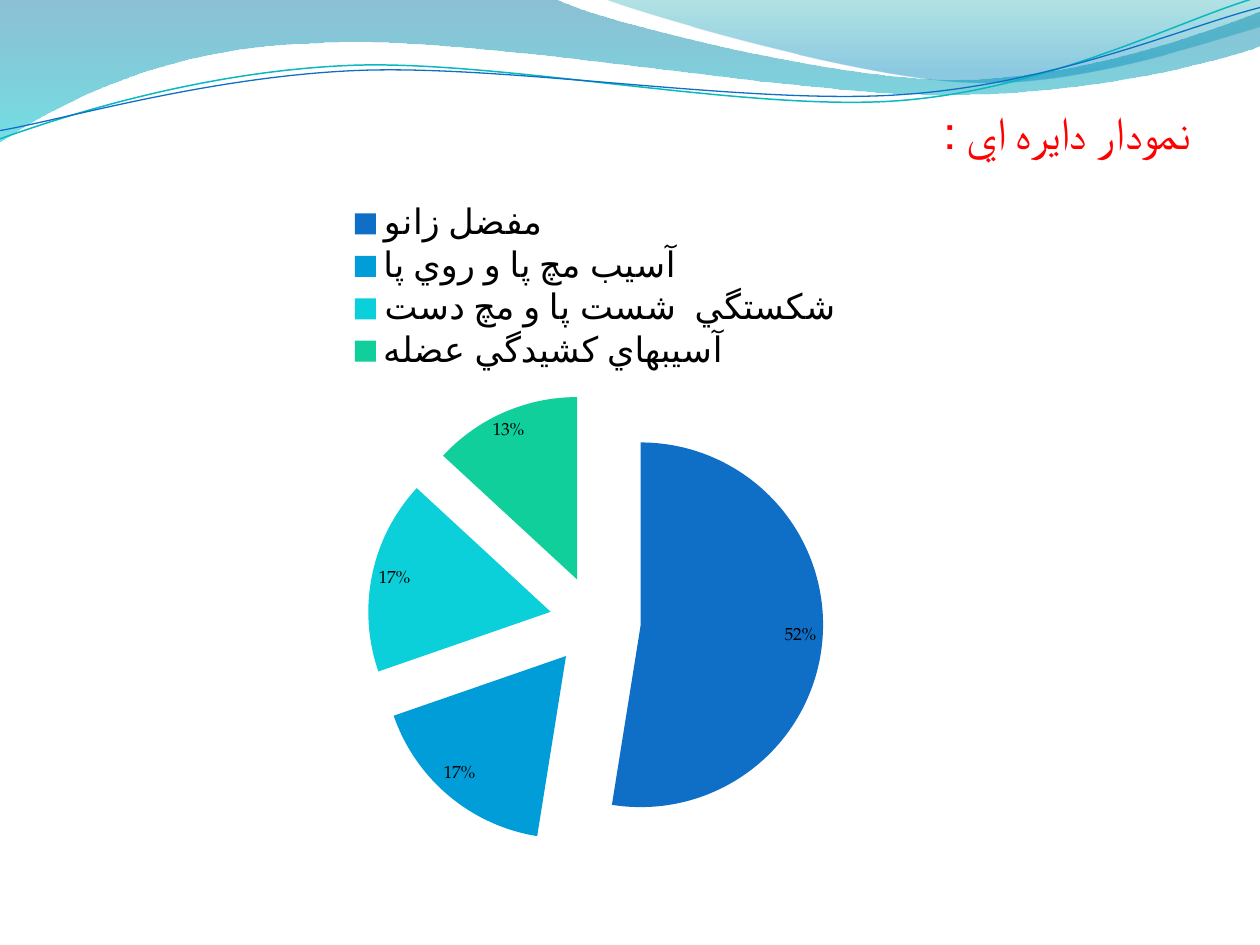
import pptx
import pptx.chart.data
import pptx.dml.color
import pptx.enum.chart
import pptx.enum.text
import pptx.oxml
import pptx.oxml.ns
import pptx.util
from lxml import etree

RED = pptx.dml.color.RGBColor(0xFF, 0x00, 0x00)
BLACK = pptx.dml.color.RGBColor(0x00, 0x00, 0x00)
BLUE = pptx.dml.color.RGBColor(0x0F, 0x6F, 0xC6)
SKY = pptx.dml.color.RGBColor(0x00, 0x9D, 0xD9)
CYAN = pptx.dml.color.RGBColor(0x0B, 0xD0, 0xD9)
GREEN = pptx.dml.color.RGBColor(0x10, 0xCF, 0x9B)
TEAL = pptx.dml.color.RGBColor(0x0A, 0xB8, 0xBF)
WAVE_TOP = pptx.dml.color.RGBColor(0x00, 0x74, 0xA1)
WAVE_BOTTOM = pptx.dml.color.RGBColor(0x00, 0xC6, 0xCF)
CREST_TOP = pptx.dml.color.RGBColor(0x00, 0xA1, 0xA9)
CREST_BOTTOM = pptx.dml.color.RGBColor(0x00, 0x8B, 0xBF)
FONT = "TeX Gyre Pagella"
UNITS = 1000  # freeform units per inch

deck = pptx.Presentation()
deck.slide_width = pptx.util.Inches(10)
deck.slide_height = pptx.util.Inches(7.5)
WIDTH, HEIGHT = deck.slide_width, deck.slide_height
page = deck.slides.add_slide(deck.slide_layouts[6])


def add_curve(start, segments, closed):
    """Draw segments of one point (a line) or three (a Bezier curve), in inches."""
    points = [(round(x * UNITS), round(y * UNITS))
              for x, y in [start, *(point for segment in segments for point in segment)]]
    builder = page.shapes.build_freeform(*points[0], scale=pptx.util.Inches(1) / UNITS)
    builder.add_line_segments(points[1:], close=closed)
    shape = builder.convert_to_shape()
    shape.shadow.inherit = False
    lines = iter(list(shape._element.iter(pptx.oxml.ns.qn("a:lnTo"))))
    for segment in segments:
        group = [next(lines) for point in segment]
        if len(group) == 3:
            curve = etree.Element(pptx.oxml.ns.qn("a:cubicBezTo"))
            group[0].addprevious(curve)
            for line in group:
                curve.append(line[0])
                line.getparent().remove(line)
    return shape


def add_text(text, left, top, width, height, size, color, space_before):
    """Add one right-to-left paragraph; the frame is in shares of the slide."""
    box = page.shapes.add_textbox(int(left * WIDTH), int(top * HEIGHT),
                                  int(width * WIDTH), int(height * HEIGHT))
    box.text_frame.word_wrap = True
    para = box.text_frame.paragraphs[0]
    para.alignment = pptx.enum.text.PP_ALIGN.RIGHT
    para.space_before = pptx.util.Pt(space_before)
    para._p.get_or_add_pPr().set("rtl", "1")
    span = para.add_run()
    span.text = text
    span.font.size = pptx.util.Pt(size)
    span.font.name = FONT
    span.font.color.rgb = color


# Filled waves: start, segments, gradient stops (position, colour, opacity in percent)
waves = [
    ((0, 0), [
        [(4.4, -0.01)],
        [(4.76, 0.17), (6.64, 0.63), (7.58, 0.63)],
        [(8.53, 0.63), (9.58, 0.26), (10, 0.09)],
        [(10.01, 0.36)],
        [(9.83, 0.44), (8.7, 0.76), (7.46, 0.75)],
        [(6.22, 0.75), (3.82, 0.28), (2.57, 0.34)],
        [(1.29, 0.36), (0.46, 0.83), (-0.01, 1.13)],
    ], [(0, WAVE_TOP, 45), (1, WAVE_BOTTOM, 55)]),
    ((4.79, -0.01), [
        [(5.09, 0.11), (6.82, 0.62), (7.69, 0.65)],
        [(8.56, 0.69), (9.61, 0.32), (10, 0.21)],
        [(10, 0)],
    ], [(0, CREST_TOP, 30), (0.8, CREST_BOTTOM, 45)]),
]
for start, segments, stops in waves:
    wave = add_curve(start, segments, closed=True)
    wave.line.fill.background()
    wave.fill.gradient()
    wave.fill.gradient_angle = 270
    for stop, (position, color, opacity) in zip(wave.fill.gradient_stops, stops):
        stop.position = position
        stop.color.rgb = color
        color_node = stop._gs.find(pptx.oxml.ns.qn("a:srgbClr"))
        etree.SubElement(color_node, pptx.oxml.ns.qn("a:alpha"), val=str(opacity * 1000))

# Thin lines that follow the waves
threads = [
    ((-0.02, 1.11), [
        [(0.48, 0.93), (1.58, 0.57), (2.77, 0.52)],
        [(3.95, 0.47), (5.93, 0.89), (7.13, 0.8)],
        [(8.33, 0.71), (9.38, 0.15), (9.98, -0.02)],
    ], TEAL, 0.85),
    ((-0.02, 1.04), [
        [(0.47, 0.96), (1.64, 0.61), (2.83, 0.56)],
        [(4.03, 0.51), (5.97, 0.84), (7.17, 0.75)],
        [(8.36, 0.67), (9.41, 0.21), (10, 0.06)],
    ], BLUE, 0.75),
]
for start, segments, color, weight in threads:
    thread = add_curve(start, segments, closed=False)
    thread.fill.background()
    thread.line.color.rgb = color
    thread.line.width = pptx.util.Pt(weight)

add_text("نمودار دايره اي :", left=0.055, top=0.104, width=0.9, height=0.145,
         size=26, color=RED, space_before=5)

# Pie of injuries
injuries = [
    ("مفضل زانو", 52, BLUE),
    ("آسيب مچ پا و روي پا", 17, SKY),
    ("شكستگي  شست پا و مچ دست", 17, CYAN),
    ("آسيبهاي كشيدگي عضله", 13, GREEN),
]
chart_data = pptx.chart.data.CategoryChartData()
chart_data.categories = [name for name, share, color in injuries]
chart_data.add_series("Series 1", [share for name, share, color in injuries])
chart = page.shapes.add_chart(
    pptx.enum.chart.XL_CHART_TYPE.PIE, int(0.086 * WIDTH), int(0.201 * HEIGHT),
    int(0.773 * WIDTH), int(0.716 * HEIGHT), chart_data).chart
chart.has_title = False
chart.font.name = FONT
chart.font.size = pptx.util.Pt(10)
chart.font.color.rgb = BLACK
chart.has_legend = True
chart.legend.position = pptx.enum.chart.XL_LEGEND_POSITION.TOP
chart.legend.include_in_layout = False
chart.legend.font.size = pptx.util.Pt(20)
chart.legend.font.name = FONT
chart.legend.font.color.rgb = BLACK

pie = chart.plots[0]
pie.vary_by_categories = True
pie.has_data_labels = True
labels = pie.data_labels
labels.show_value = True
labels.show_percentage = False
labels.number_format = '0"%"'
labels.number_format_is_linked = False
labels.position = pptx.enum.chart.XL_LABEL_POSITION.BEST_FIT

series = pie.series[0]
for index, (name, share, color) in enumerate(injuries):
    slice_fill = series.points[index].format.fill
    slice_fill.solid()
    slice_fill.fore_color.rgb = color
explosion = etree.Element(pptx.oxml.ns.qn("c:explosion"), val="25")
series._element.find(pptx.oxml.ns.qn("c:dPt")).addprevious(explosion)

deck.save("out.pptx")
